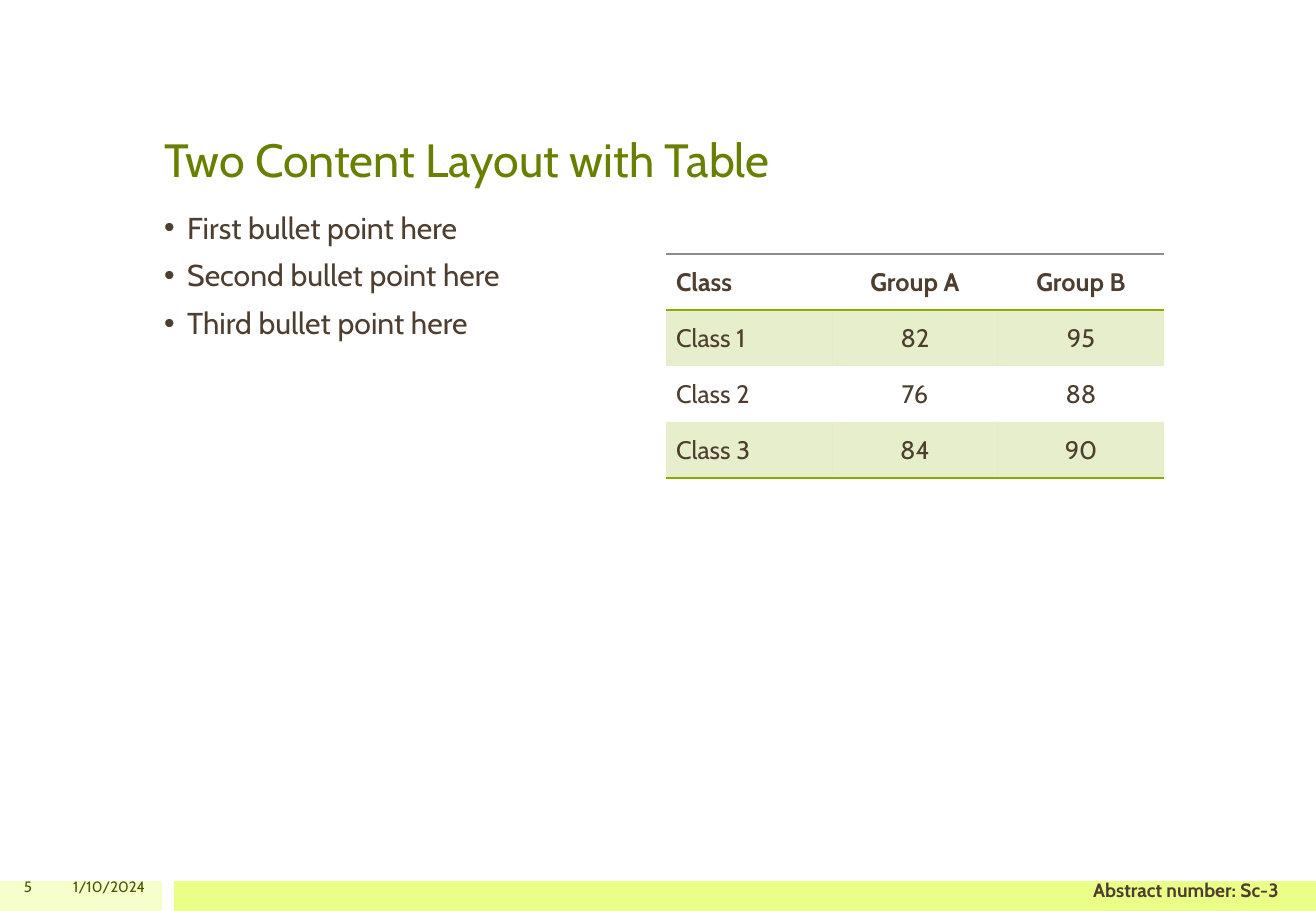
from lxml import etree
from pptx import Presentation
from pptx.dml.color import RGBColor
from pptx.enum.shapes import MSO_SHAPE
from pptx.enum.text import MSO_ANCHOR, MSO_AUTO_SIZE, PP_ALIGN
from pptx.oxml.ns import qn
from pptx.util import Emu, Pt

RECT = MSO_SHAPE.RECTANGLE
TOP, MIDDLE, BOTTOM = MSO_ANCHOR.TOP, MSO_ANCHOR.MIDDLE, MSO_ANCHOR.BOTTOM
LEFT, CENTER, RIGHT = PP_ALIGN.LEFT, PP_ALIGN.CENTER, PP_ALIGN.RIGHT
NO_FIT = MSO_AUTO_SIZE.NONE
PX = 914400 / 121.5
NO_STYLE = "{2D5ABB26-0587-4C30-8999-92F81FD0307C}"
COLORS = {
    "title": "688000", "text": "4D3E2F", "foot": "455500",
    "pale": "F6FFCC", "lime": "E9FF88", "green": "8BAA00", "gray": "8C8C8C",
}


def px(*nums):
    return [Emu(round(n * PX)) for n in nums]


def style(para, size, color, align=LEFT, bold=False):
    para.alignment = align
    para.font.name = "Cabin"
    para.font.size = Pt(size)
    para.font.bold = bold
    para.font.color.rgb = RGBColor.from_string(COLORS[color])


prs = Presentation()
prs.slide_width, prs.slide_height = px(1316, 911)
slide = prs.slides.add_slide(prs.slide_layouts[1])
shapes = slide.shapes
title, body = slide.placeholders

# Footer bands
for left, width, color in [(0, 162, "pale"), (174, 1142, "lime")]:
    band = shapes.add_shape(RECT, *px(left, 881, width, 30))
    band.shadow.inherit = False
    band.fill.solid()
    band.fill.fore_color.rgb = RGBColor.from_string(COLORS[color])
    band.line.fill.background()

# Title and list
for holder, box, anchor in [
    (title, (152, 36, 1012, 157), BOTTOM),
    (body, (152, 207, 498, 613), TOP),
]:
    holder.left, holder.top, holder.width, holder.height = px(*box)
    holder.text_frame.auto_size = NO_FIT
    holder.text_frame.vertical_anchor = anchor
title.text_frame.text = "Two Content Layout with Table"
style(title.text_frame.paragraphs[0], 27.6, "title")

body.text_frame.text = "\n".join(
    f"{rank} bullet point here" for rank in ("First", "Second", "Third"))
indent = px(23)[0]
for para in body.text_frame.paragraphs:
    style(para, 17.9, "text")
    para.line_spacing = 0.9
    para.space_before = Pt(8.9)
    props = para._p.get_or_add_pPr()
    props.set("marL", str(indent))
    props.set("indent", str(-indent))
    etree.SubElement(props, qn("a:buChar"), char="•")

# Score table
rows = [
    ("Class", "Group A", "Group B"),
    ("Class 1", "82", "95"),
    ("Class 2", "76", "88"),
    ("Class 3", "84", "90"),
]
# Borders by row, bottom first since each goes in at the front
edges = {0: [("a:lnB", "green", 1.5), ("a:lnT", "gray", 0.75)],
         3: [("a:lnB", "green", 1.5)]}
frame = shapes.add_table(4, 3, *px(666, 254, 498, 224))
table = frame.table
table.horz_banding = False
next(frame._element.iter(qn("a:tableStyleId"))).text = NO_STYLE
for r, row in enumerate(rows):
    for c, text in enumerate(row):
        cell = table.cell(r, c)
        cell.text = text
        cell.vertical_anchor = MIDDLE
        cell.margin_left, cell.margin_right = px(10, 10)
        cell.margin_top, cell.margin_bottom = px(5, 5)
        style(cell.text_frame.paragraphs[0], 15, "text",
              CENTER if c else LEFT, r == 0)
        props = cell._tc.get_or_add_tcPr()
        if r % 2:
            cell.fill.solid()
            cell.fill.fore_color.rgb = RGBColor.from_string(COLORS["green"])
            tint = next(props.iter(qn("a:srgbClr")))
            etree.SubElement(tint, qn("a:alpha"), val="20000")
        else:
            cell.fill.background()
        for tag, color, width in edges.get(r, []):
            line = etree.Element(qn(tag), w=str(Pt(width)))
            fill = etree.SubElement(line, qn("a:solidFill"))
            etree.SubElement(fill, qn("a:srgbClr"), val=COLORS[color])
            props.insert(0, line)

# Footer text
for text, box, size, color, align, after in [
    ("5", (0, 875, 44, 24), 8.9, "foot", RIGHT, 4.9),
    ("1/10/2024", (49, 875, 108, 24), 8.9, "foot", RIGHT, 4.9),
    ("Abstract number: Sc-3", (1050, 878, 272, 23), 11.4, "text", CENTER, 0),
]:
    note = shapes.add_textbox(*px(*box)).text_frame
    note.word_wrap = True
    note.text = text
    para = note.paragraphs[0]
    style(para, size, color, align, bold=align == CENTER)
    para.space_after = Pt(after)
    if align == CENTER:
        note.margin_left = note.margin_right = 0
        note.margin_top = note.margin_bottom = 0
    else:
        note.vertical_anchor = MIDDLE

prs.save("out.pptx")
